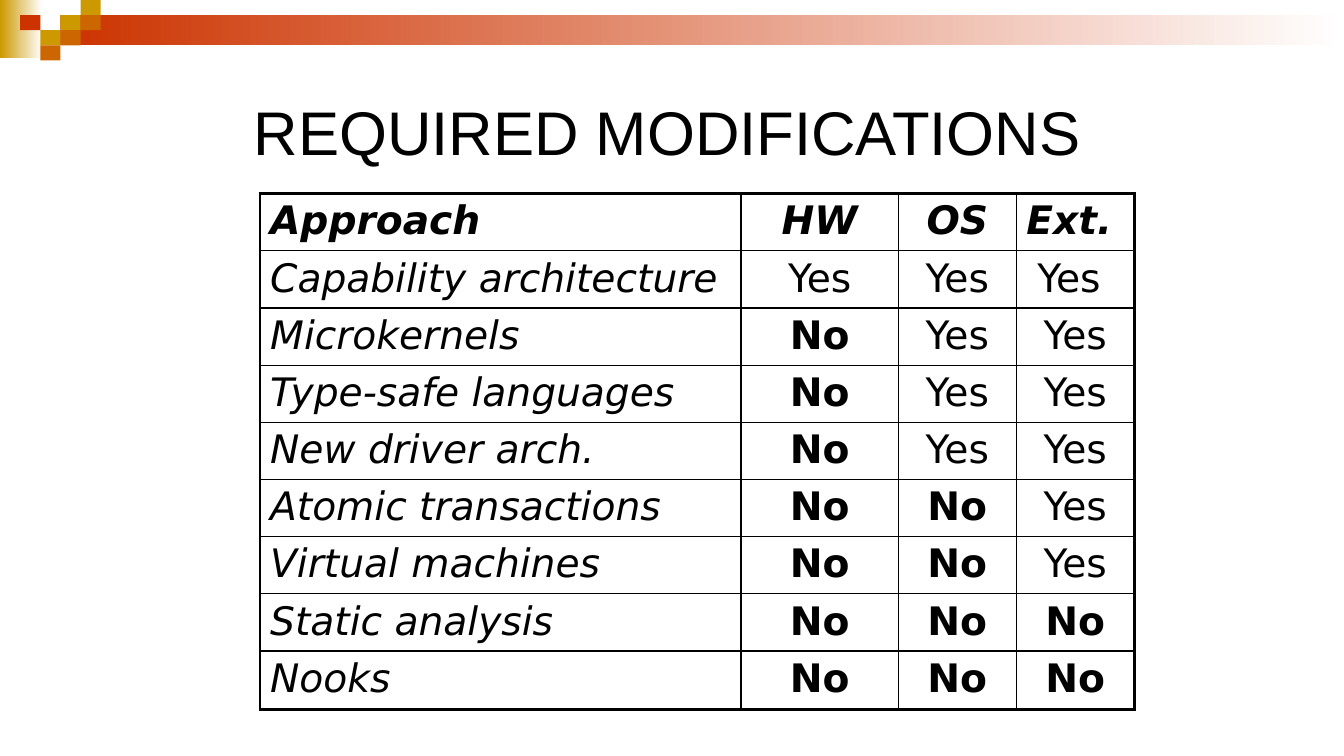
from lxml import etree
from pptx import Presentation
from pptx.dml.color import RGBColor
from pptx.enum.shapes import MSO_SHAPE as Shape
from pptx.enum.text import MSO_ANCHOR as Anchor, PP_ALIGN as Align
from pptx.oxml.ns import qn
from pptx.util import Inches, Pt

HUES = {"ink": "000000", "paper": "FFFFFF", "gold": "CC9900",
        "red": "CC3300", "rust": "CC6600"}
WIDE, HIGH = 13.33, 7.5
TILE_W, TILE_H = 0.2, 0.15
TILES = [(3, 1, "gold"), (4, 0, "gold"), (4, 1, "rust"), (2, 2, "gold"),
         (1, 1, "red"), (3, 2, "rust"), (2, 3, "rust")]
HEAD = ["Approach", "HW", "OS", "Ext."]
ROWS = [
    ["Capability architecture", "Yes", "Yes", "Yes "],
    ["Microkernels", "No", "Yes", "Yes"],
    ["Type-safe languages", "No", "Yes", "Yes"],
    ["New driver arch.", "No", "Yes", "Yes"],
    ["Atomic transactions", "No", "No", "Yes"],
    ["Virtual machines", "No", "No", "Yes"],
    ["Static analysis", "No", "No", "No"],
    ["Nooks", "No", "No", "No"],
]
COLS = [4.77, 1.56, 1.17, 1.17]
TALL = [0.42] + [0.5] * 7 + [0.58]


def hue(name):
    return RGBColor.from_string(HUES[name])


def style(run, face, size, bold=False, italic=False):
    font = run.font
    font.name, font.size = face, Pt(size)
    font.bold, font.italic = bold, italic
    font.color.rgb = hue("ink")


def block(slide, box, name, fade=False):
    """Add a borderless rectangle, plain or fading to the right."""
    rect = slide.shapes.add_shape(Shape.RECTANGLE, *map(Inches, box))
    rect.shadow.inherit = False
    rect.line.fill.background()
    if fade:
        rect.fill.gradient()
        rect.fill.gradient_angle = 0
        for stop, tone in zip(rect.fill.gradient_stops, (name, "paper")):
            stop.color.rgb = hue(tone)
    else:
        rect.fill.solid()
        rect.fill.fore_color.rgb = hue(name)


def banner(slide, box):
    left, top, width, height = box
    block(slide, (left, top, 0.42, height), "gold", fade=True)
    start = 3 * TILE_W
    block(slide, (left + start, top + TILE_H, width - start, 2 * TILE_H),
          "red", fade=True)
    for col, row, name in TILES:
        block(slide, (left + col * TILE_W, top + row * TILE_H, TILE_W, TILE_H), name)


def title(slide, box, text):
    frame = slide.shapes.add_textbox(*map(Inches, box)).text_frame
    frame.word_wrap = True
    frame.vertical_anchor = Anchor.MIDDLE
    frame.text = text
    style(frame.paragraphs[0].runs[0], "Arial", 44)


def border(cell, widths):
    """Draw the left, right, top and bottom lines, widths in points."""
    props = cell._tc.get_or_add_tcPr()
    for spot, (side, width) in enumerate(zip("LRTB", widths)):
        line = etree.Element(qn("a:ln" + side), w=str(Pt(width)))
        fill = etree.SubElement(line, qn("a:solidFill"))
        etree.SubElement(fill, qn("a:srgbClr"), val=HUES["ink"])
        props.insert(spot, line)


def matrix(slide, box):
    data = [HEAD] + ROWS
    last_row, last_col = len(data) - 1, len(HEAD) - 1
    frame = slide.shapes.add_table(len(data), len(HEAD), *map(Inches, box))
    table = frame.table
    for col, width in zip(table.columns, COLS):
        col.width = Inches(width)
    for row, height in zip(table.rows, TALL):
        row.height = Inches(height)
    frame.height = Inches(box[3])
    for r, words in enumerate(data):
        for c, word in enumerate(words):
            cell = table.cell(r, c)
            cell.fill.background()
            edges = (c == 0, c == last_col, r == 0, r == last_row)
            border(cell, [2.25 if edge else 1 for edge in edges])
            cell.text_frame.text = word
            para = cell.text_frame.paragraphs[0]
            if c and word != "Ext.":
                para.alignment = Align.CENTER
            style(para.runs[0], "DejaVu Sans", 28,
                  bold=r == 0 or word == "No", italic=r == 0 or c == 0)


def main():
    deck = Presentation()
    deck.slide_width, deck.slide_height = Inches(WIDE), Inches(HIGH)
    slide = deck.slides.add_slide(deck.slide_layouts[6])
    banner(slide, (0, 0, WIDE, 0.58))
    title(slide, (2.42, 0.67, 9, 1.25), "REQUIRED MODIFICATIONS")
    matrix(slide, (2.58, 1.92, sum(COLS), 5.12))
    deck.save("out.pptx")


if __name__ == "__main__":
    main()
